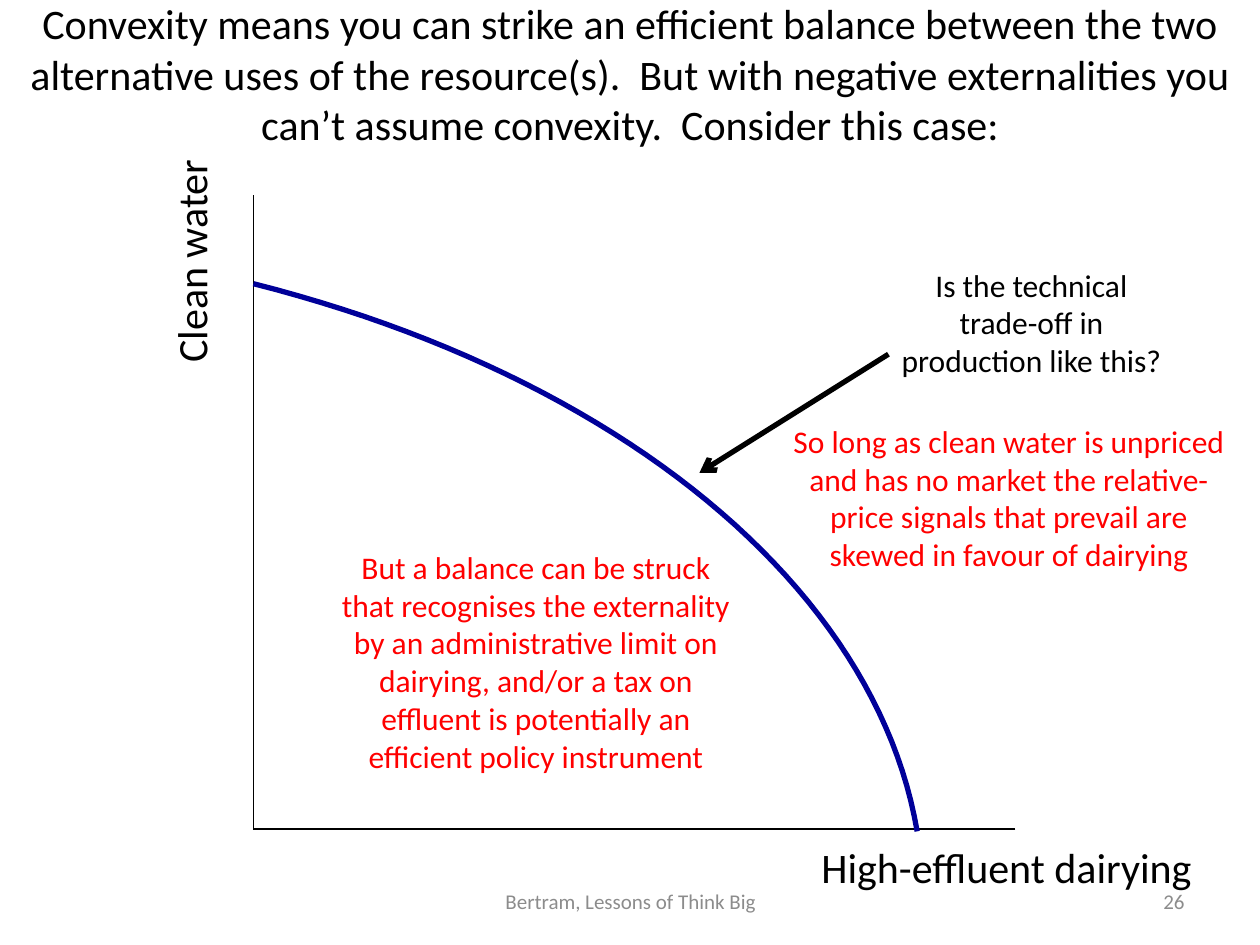
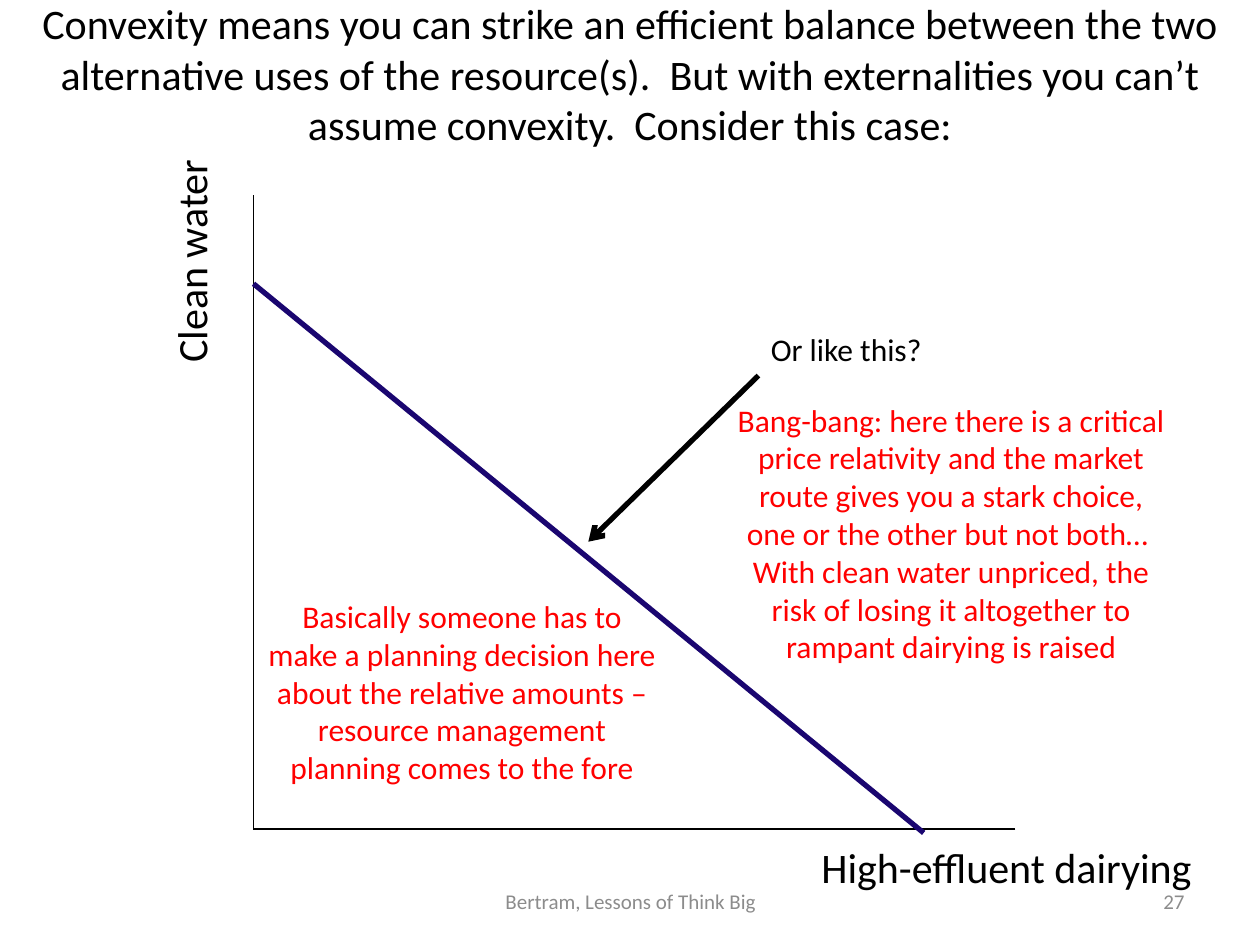
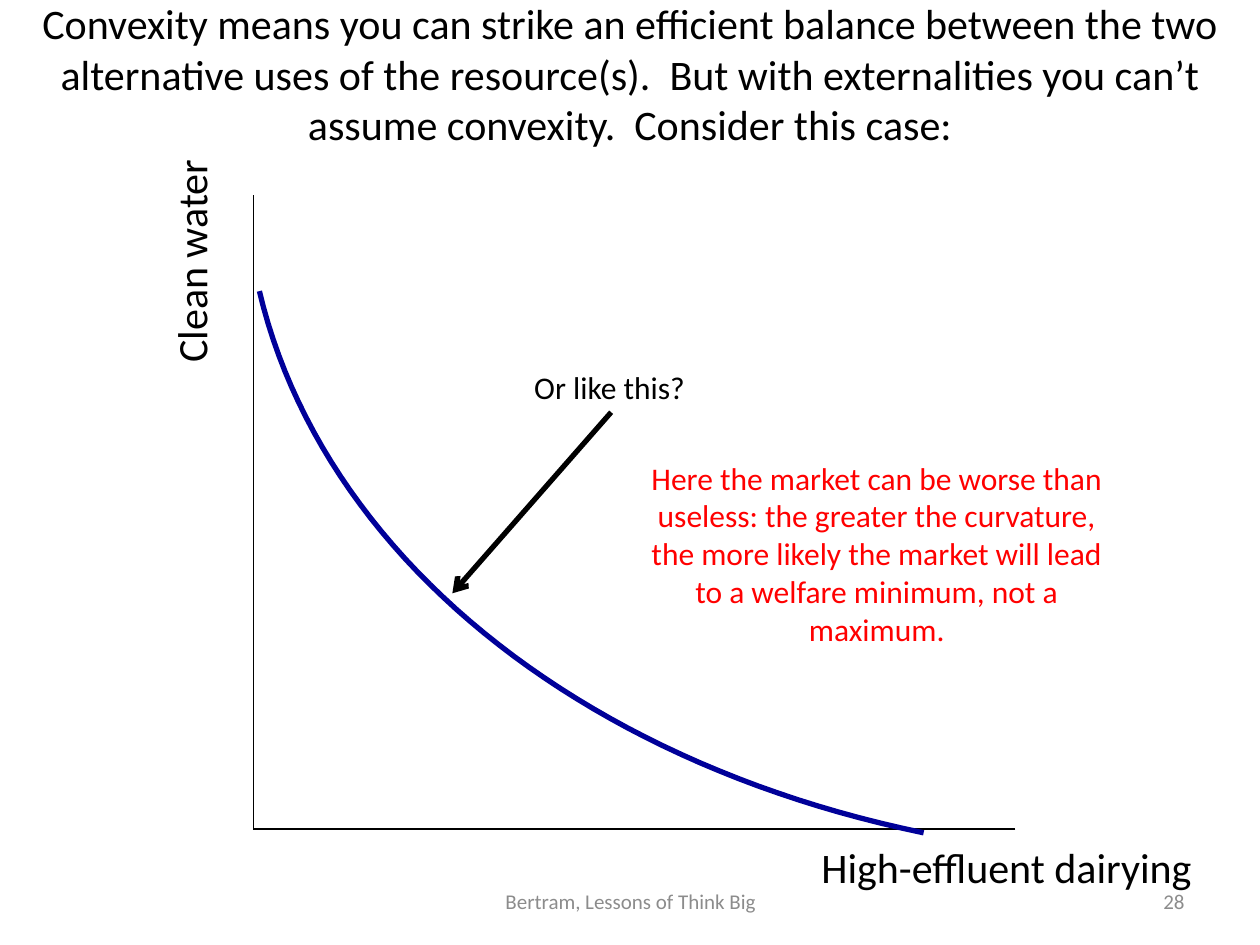
from pptx import Presentation
from pptx.dml.color import RGBColor
from pptx.enum.shapes import MSO_CONNECTOR
from pptx.enum.text import MSO_ANCHOR, MSO_AUTO_SIZE, PP_ALIGN
from pptx.oxml.ns import qn
from pptx.util import Cm, Pt
from lxml.etree import SubElement

BLACK = RGBColor(0x00, 0x00, 0x00)
GREY = RGBColor(0x8C, 0x8C, 0x8C)
RED = RGBColor(0xFF, 0x00, 0x00)
NAVY = RGBColor(0x00, 0x00, 0x99)
INDIGO = RGBColor(0x1A, 0x06, 0x70)

FONT = "Calibri"
LARGE, MEDIUM, SMALL = Pt(24), Pt(18), Pt(12)
THIN, THICK = Pt(1), Pt(3)

ORIGIN = (5.11, 16.71)
AXIS_TOP = (5.11, 3.94)
AXIS_RIGHT = (20.47, 16.71)
FRONTIER_TOP = (5.11, 5.72)
FRONTIER_RIGHT = (18.62, 16.79)
CURVE_STEPS = 48

TITLE = (
    "Convexity means you can strike an efficient balance between the two "
    "alternative uses of the resource(s).  But with {} you can’t assume "
    "convexity.  Consider this case:"
)
FOOTER = "Bertram, Lessons of Think Big"


def bezier_point(controls, t):
    weights = ((1 - t) ** 3, 3 * t * (1 - t) ** 2, 3 * t**2 * (1 - t), t**3)
    return tuple(
        Cm(sum(weight * value for weight, value in zip(weights, values)))
        for values in zip(*controls)
    )


class TradeOffDeck:
    def __init__(self):
        self.presentation = Presentation()
        self.presentation.slide_width = Cm(25.4)
        self.presentation.slide_height = Cm(19.05)
        self.slide = None

    def start_slide(self, externalities, number):
        layout = self.presentation.slide_layouts[5]
        self.slide = self.presentation.slides.add_slide(layout)
        self.title(TITLE.format(externalities))
        self.text(FOOTER, (8.69, 17.65, 8.05, 1.02), SMALL, GREY,
                  anchor=MSO_ANCHOR.MIDDLE)
        self.text(str(number), (18.21, 17.65, 5.92, 1.02), SMALL, GREY,
                  PP_ALIGN.RIGHT, MSO_ANCHOR.MIDDLE)
        self.axes()

    def fill_text(self, shape, text, size, color, alignment, anchor):
        frame = shape.text_frame
        frame.text = text
        frame.vertical_anchor = anchor
        frame.auto_size = MSO_AUTO_SIZE.NONE
        frame.word_wrap = True
        paragraph = frame.paragraphs[0]
        paragraph.alignment = alignment
        font = paragraph.runs[0].font
        font.name = FONT
        font.size = size
        font.color.rgb = color

    def title(self, text):
        shape = self.slide.shapes.title
        shape.left, shape.top = Cm(0), Cm(0.03)
        shape.width, shape.height = Cm(25.4), Cm(2.9)
        self.fill_text(shape, text, LARGE, BLACK, PP_ALIGN.CENTER,
                       MSO_ANCHOR.MIDDLE)

    def text(self, text, box, size, color, alignment=PP_ALIGN.CENTER,
             anchor=MSO_ANCHOR.TOP):
        shape = self.slide.shapes.add_textbox(*map(Cm, box))
        self.fill_text(shape, text, size, color, alignment, anchor)
        return shape

    def label(self, text, box, size):
        shape = self.text(text, box, size, BLACK, PP_ALIGN.LEFT)
        shape.text_frame.word_wrap = False
        return shape

    def note(self, text, box, color=RED):
        self.text(text, box, MEDIUM, color)

    def line(self, start, end, color=BLACK, width=THIN):
        connector = self.slide.shapes.add_connector(
            MSO_CONNECTOR.STRAIGHT, *map(Cm, start + end))
        connector.line.color.rgb = color
        connector.line.width = width
        SubElement(connector._element.spPr, qn("a:effectLst"))
        return connector

    def arrow(self, start, end):
        connector = self.line(start, end, width=THICK)
        SubElement(connector.line._get_or_add_ln(), qn("a:tailEnd"),
                   type="arrow")

    def curve(self, *controls):
        first, *others = (bezier_point(controls, step / CURVE_STEPS)
                          for step in range(CURVE_STEPS + 1))
        builder = self.slide.shapes.build_freeform(*first)
        builder.add_line_segments(others, close=False)
        shape = builder.convert_to_shape()
        shape.shadow.inherit = False
        shape.fill.background()
        shape.line.color.rgb = NAVY
        shape.line.width = THICK

    def axes(self):
        self.line(AXIS_TOP, ORIGIN)
        self.line(AXIS_RIGHT, ORIGIN)
        self.label("High-effluent dairying", (16.31, 16.84, 8.08, 1.27), LARGE)
        vertical = self.label("Clean water", (1.52, 4.6, 4.65, 1.27), LARGE)
        vertical.rotation = 270


def add_convex_slide(deck):
    deck.start_slide("negative externalities", 26)
    deck.curve(FRONTIER_TOP, (12.5, 7.59), (17.65, 11.84), (18.49, 16.76))
    deck.note("Is the technical trade-off in production like this?",
              (17.91, 5.23, 5.77, 2.57), BLACK)
    deck.arrow((17.91, 7.14), (14.1, 9.53))
    deck.note(
        "But a balance can be struck that recognises the externality by an "
        "administrative limit on dairying, and/or a tax on effluent is "
        "potentially an efficient policy instrument",
        (6.5, 10.92, 8.61, 4.88))
    deck.note(
        "So long as clean water is unpriced and has no market the "
        "relative-price signals that prevail are skewed in favour of dairying",
        (15.54, 8.38, 9.6, 3.33))


def add_linear_slide(deck):
    deck.start_slide("externalities", 27)
    deck.line(FRONTIER_TOP, FRONTIER_RIGHT, INDIGO, THICK)
    deck.label("Or like this?", (15.29, 6.53, 3.58, 1.02), MEDIUM)
    deck.arrow((15.29, 7.57), (11.86, 10.92))
    deck.note(
        "Bang-bang: here there is a critical price relativity and the market "
        "route gives you a stark choice, one or the other but not both…  With "
        "clean water unpriced, the risk of losing it altogether to rampant "
        "dairying is raised",
        (14.5, 7.95, 9.35, 5.64))
    deck.note(
        "Basically someone has to make a planning decision here about the "
        "relative amounts – resource management planning comes to the fore",
        (5.11, 11.91, 8.41, 4.11))


def add_concave_slide(deck):
    deck.start_slide("externalities", 28)
    deck.curve(FRONTIER_RIGHT, (11.61, 15.34), (6.48, 11.15), (5.23, 5.87))
    deck.label("Or like this?", (10.52, 7.29, 3.58, 1.02), MEDIUM)
    deck.arrow((12.32, 8.31), (9.12, 11.96))
    deck.note(
        "Here the market can be worse than useless: the greater the curvature, "
        "the more likely the market will lead to a welfare minimum, not a "
        "maximum.",
        (12.62, 9.12, 10.11, 4.11))


def main():
    deck = TradeOffDeck()
    add_convex_slide(deck)
    add_linear_slide(deck)
    add_concave_slide(deck)
    deck.presentation.save("out.pptx")


if __name__ == "__main__":
    main()
